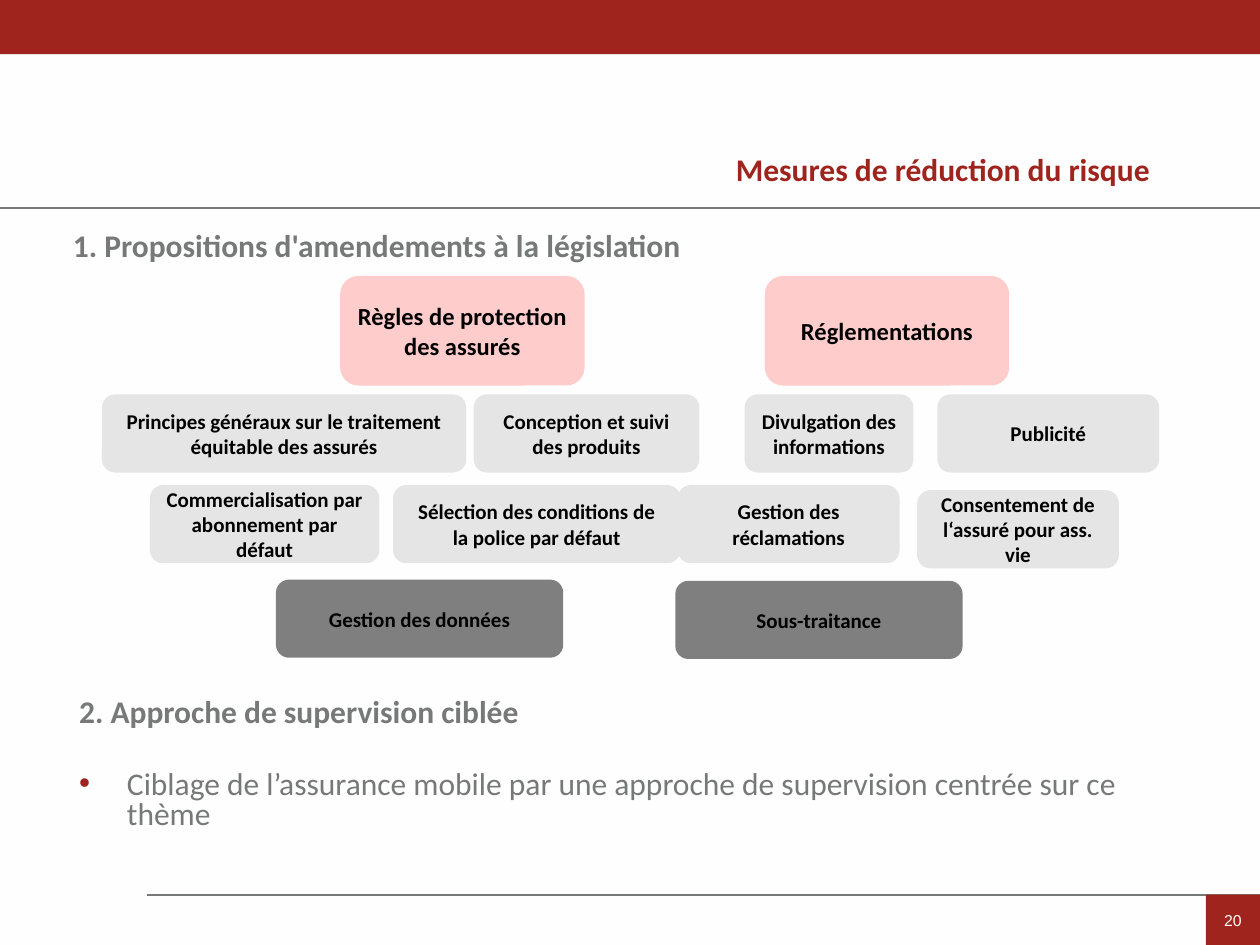
from lxml import etree
from pptx import Presentation
from pptx.dml.color import RGBColor
from pptx.enum import shapes, text
from pptx.oxml import ns
from pptx.util import Inches, Pt

COLORS = {
    "background": "FEFEFE",
    "red": "A0241E",
    "bullet": "9F231E",
    "grey": "777978",
    "black": "000000",
    "pink": "FFCCCC",
    "light": "E5E5E5",
    "dark": "7F7F7F",
}
CATEGORIES = [(2.7, "Règles de protection des assurés"), (6.07, "Réglementations")]
MEASURES = [
    (0.81, 3.13, 2.89, "light", "Principes généraux sur le traitement équitable des assurés"),
    (3.76, 3.13, 1.79, "light", "Conception et suivi des produits"),
    (5.91, 3.13, 1.34, "light", "Divulgation des informations"),
    (7.44, 3.13, 1.76, "light", "Publicité"),
    (1.19, 3.85, 1.82, "light", "Commercialisation par abonnement par défaut"),
    (5.38, 3.85, 1.76, "light", "Gestion des réclamations"),
    (3.12, 3.85, 2.28, "light", "Sélection des conditions de la police par défaut"),
    (7.28, 3.89, 1.6, "light", "Consentement de l‘assuré pour ass. vie"),
    (2.19, 4.6, 2.28, "dark", "Gestion des données"),
    (5.36, 4.61, 2.28, "dark", "Sous-traitance"),
]


def rgb(name):
    """Return the named colour."""
    return RGBColor.from_string(COLORS[name])


def style(paragraph, size, color, bold=True, face="Calibri"):
    """Format every run of a paragraph."""
    for run in paragraph.runs:
        run.font.name = face
        run.font.size = Pt(size)
        run.font.bold = bold
        run.font.color.rgb = rgb(color)


def add_block(slide, kind, left, top, width, height, fill):
    """Add a filled shape without outline or shadow."""
    block = slide.shapes.add_shape(
        kind, Inches(left), Inches(top), Inches(width), Inches(height))
    block.shadow.inherit = False
    block.fill.solid()
    block.fill.fore_color.rgb = rgb(fill)
    block.line.fill.background()
    return block


def add_box(slide, left, top, width, height, fill, label, size):
    """Add a rounded box with a centred bold label."""
    box = add_block(slide, shapes.MSO_SHAPE.ROUNDED_RECTANGLE, left, top, width, height, fill)
    frame = box.text_frame
    frame.text = label
    frame.word_wrap = True
    frame.vertical_anchor = text.MSO_ANCHOR.MIDDLE
    frame.paragraphs[0].alignment = text.PP_ALIGN.CENTER
    style(frame.paragraphs[0], size, "black")


def add_rule(slide, left, top):
    """Add a grey rule that runs to the right edge."""
    rule = slide.shapes.add_connector(
        shapes.MSO_CONNECTOR.STRAIGHT, Inches(left), Inches(top), Inches(10), Inches(top))
    rule.line.color.rgb = rgb("grey")
    rule.line.width = Pt(1.25)
    etree.SubElement(rule._element.spPr, ns.qn("a:effectLst"))


def add_page_number(slide, number):
    """Add the red page number square in the corner."""
    square = add_block(slide, shapes.MSO_SHAPE.RECTANGLE, 9.57, 7.1, 0.43, 0.4, "red")
    frame = square.text_frame
    frame.margin_left = frame.margin_right = 0
    frame.text = number
    frame.vertical_anchor = text.MSO_ANCHOR.MIDDLE
    frame.paragraphs[0].alignment = text.PP_ALIGN.CENTER
    style(frame.paragraphs[0], 9, "background", False, "Arial")


def set_title(slide, wording):
    """Place and format the slide title."""
    title = slide.shapes.title
    title.left, title.top = Inches(5.74), Inches(1.05)
    title.width, title.height = Inches(4.11), Inches(0.55)
    frame = title.text_frame
    frame.text = wording
    frame.auto_size = text.MSO_AUTO_SIZE.NONE
    frame.vertical_anchor = text.MSO_ANCHOR.MIDDLE
    heading = frame.paragraphs[0]
    heading.alignment = text.PP_ALIGN.LEFT
    heading.line_spacing = 1.1
    style(heading, 18, "red")


def add_section(slide, left, top, height, heading):
    """Add a numbered section heading and return its text frame."""
    section = slide.shapes.add_textbox(
        Inches(left), Inches(top), Inches(8.67), Inches(height))
    frame = section.text_frame
    frame.word_wrap = True
    frame.text = heading
    frame.paragraphs[0].line_spacing = 0.8
    style(frame.paragraphs[0], 18, "grey")
    return frame


def add_bullet(frame, wording):
    """Add a bulleted paragraph set apart from the heading."""
    point = frame.add_paragraph()
    point.text = wording
    point.line_spacing = 0.8
    point.space_before = Pt(24)
    properties = point._p.get_or_add_pPr()
    properties.set("marL", str(Inches(0.38)))
    properties.set("indent", str(-Inches(0.38)))
    color = etree.SubElement(properties, ns.qn("a:buClr"))
    etree.SubElement(color, ns.qn("a:srgbClr"), val=COLORS["bullet"])
    etree.SubElement(properties, ns.qn("a:buFont"), typeface="Arial")
    etree.SubElement(properties, ns.qn("a:buChar"), char="•")
    style(point, 18, "grey", False)


def main():
    """Build and save the slide."""
    deck = Presentation()
    deck.slide_width, deck.slide_height = Inches(10), Inches(7.5)
    slide = deck.slides.add_slide(deck.slide_layouts[5])
    slide.background.fill.solid()
    slide.background.fill.fore_color.rgb = rgb("background")

    add_rule(slide, 1.17, 7.1)
    add_rule(slide, 0, 1.65)
    add_block(slide, shapes.MSO_SHAPE.RECTANGLE, 0, 0, 10, 0.43, "red")
    add_page_number(slide, "20")
    set_title(slide, "Mesures de réduction du risque")

    add_section(slide, 0.48, 1.8, 0.52, "1. Propositions d'amendements à la législation")
    for left, label in CATEGORIES:
        add_box(slide, left, 2.19, 1.94, 0.87, "pink", label, 14)
    for left, top, width, fill, label in MEASURES:
        add_box(slide, left, top, width, 0.62, fill, label, 12)

    supervision = add_section(slide, 0.53, 5.5, 1.48, "2. Approche de supervision ciblée")
    add_bullet(
        supervision,
        "Ciblage de l’assurance mobile par une approche de supervision centrée sur ce thème")
    deck.save("out.pptx")


if __name__ == "__main__":
    main()
